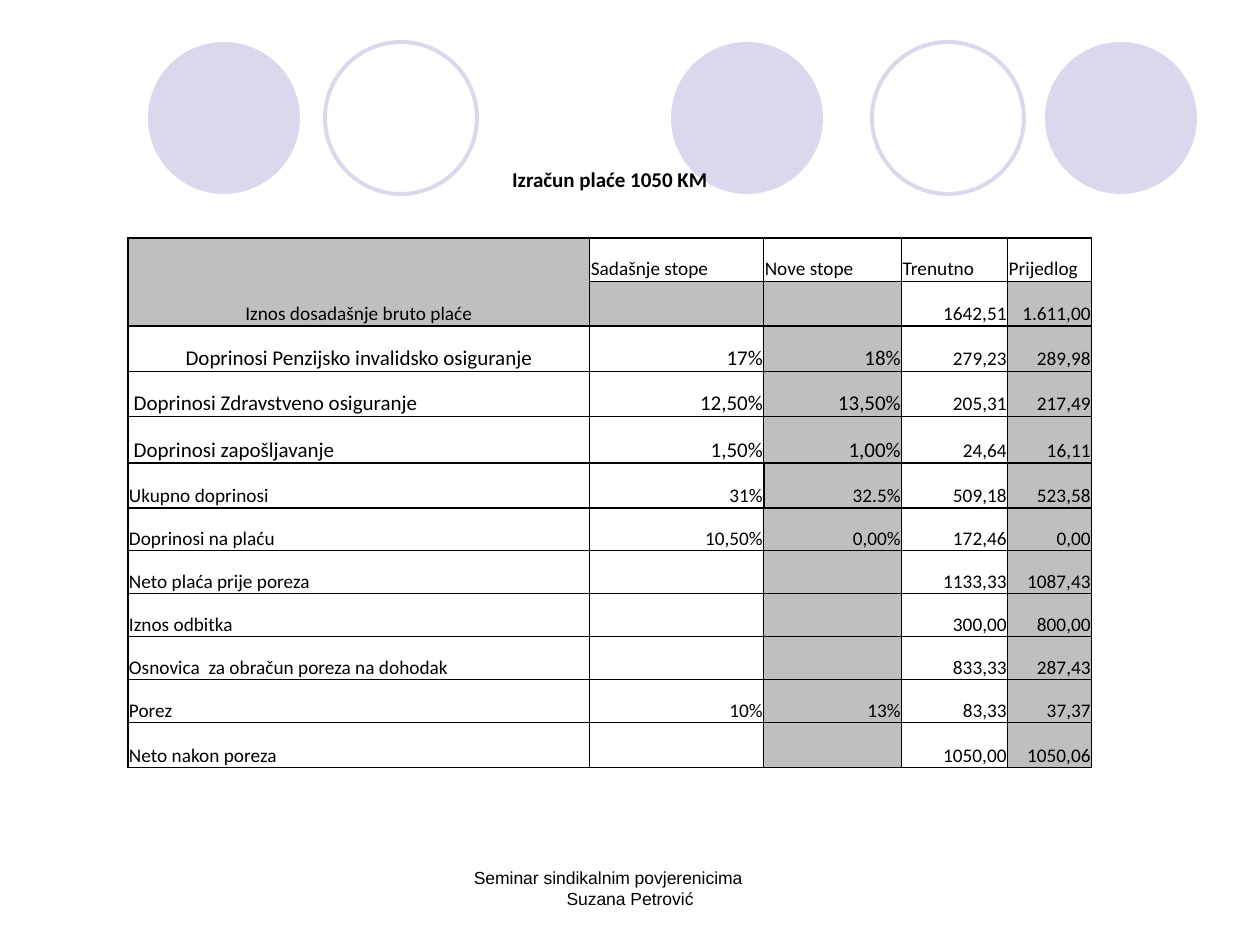
from lxml import etree
from pptx import Presentation
from pptx import util as u
from pptx.dml.color import RGBColor
from pptx.enum import shapes, text
from pptx.oxml.ns import qn

PX = 914400 / 126
BLACK = RGBColor(0x00, 0x00, 0x00)
WHITE = RGBColor(0xFF, 0xFF, 0xFF)
GREY = RGBColor(0xBF, 0xBF, 0xBF)
LILAC = RGBColor(0xD9, 0xD8, 0xEC)
LEFT, CENTER, RIGHT = text.PP_ALIGN.LEFT, text.PP_ALIGN.CENTER, text.PP_ALIGN.RIGHT

CIRCLES = [(671, True), (1045, True), (148, True), (872, False), (325, False)]
COLUMN_WIDTHS = [106, 106, 106, 144, 174, 138, 106, 84]
ROW_HEIGHTS = [45, 45, 43, 45, 45, 45, 47, 45, 43, 43, 43, 43, 43, 45]
# Each row: label, current rate, new rate, current amount, proposed amount
ROWS = [
    ("Izračun plaće 1050 KM", "", "", "", ""),
    ("", "", "", "", ""),
    ("Iznos dosadašnje bruto plaće", "Sadašnje stope", "Nove stope", "Trenutno", "Prijedlog"),
    ("", "", "", "1642,51", "1.611,00"),
    (" Doprinosi Penzijsko invalidsko osiguranje ", "17%", "18%", "279,23", "289,98"),
    (" Doprinosi Zdravstveno osiguranje", "12,50%", "13,50%", "205,31", "217,49"),
    (" Doprinosi zapošljavanje", "1,50%", "1,00%", "24,64", "16,11"),
    ("Ukupno doprinosi", "31%", "32.5%", "509,18", "523,58"),
    ("Doprinosi na plaću", "10,50%", "0,00%", "172,46", "0,00"),
    ("Neto plaća prije poreza", "", "", "1133,33", "1087,43"),
    ("Iznos odbitka", "", "", "300,00", "800,00"),
    ("Osnovica  za obračun poreza na dohodak", "", "", "833,33", "287,43"),
    ("Porez", "10%", "13%", "83,33", "37,37"),
    ("Neto nakon poreza", "", "", "1050,00", "1050,06"),
]
TITLE, HEADER, GROSS, DEDUCTION = 0, 2, 3, 10
CONTRIBUTIONS = range(4, 7)
TOTAL = 7
LABEL_COLUMNS = 4
THICK_ROW_EDGES = (2, 4, 7, 8, 14)


def px(length):
    return u.Emu(round(length * PX))


def horizontal_width(edge, column):
    """Line width in points of the row edge, counted from the top."""
    if edge < HEADER or (edge == GROSS and column < LABEL_COLUMNS):
        return 0
    return 1 if edge in THICK_ROW_EDGES else 0.5


def vertical_width(edge, row):
    """Line width in points of the column edge, counted from the left."""
    if row < HEADER or 0 < edge < LABEL_COLUMNS:
        return 0
    return 1 if edge in (0, 8) or (edge == 5 and row == TOTAL) else 0.5


def cell_fill(row, column):
    if row < HEADER:
        return None
    if column < LABEL_COLUMNS and row in (HEADER, GROSS):
        return GREY
    if row >= GROSS and (column in (5, 7) or (column == 4 and row == GROSS)):
        return GREY
    return WHITE if row in CONTRIBUTIONS and column <= 4 else None


def cell_alignment(row, column):
    if column == 0:
        return CENTER if row in (TITLE, HEADER, CONTRIBUTIONS[0]) else LEFT
    return LEFT if row == HEADER else RIGHT


class SlideBuilder:
    def __init__(self, slide, body_font="Calibri", footer_font="Arial"):
        self.slide = slide
        self.body_font = body_font
        self.footer_font = footer_font

    def style(self, paragraph, font_name, size, alignment, bold=False):
        paragraph.alignment = alignment
        font = paragraph.font
        font.name, font.size, font.bold = font_name, u.Pt(size), bold
        font.color.rgb = BLACK

    def circle(self, left, top, size, filled):
        shape = self.slide.shapes.add_shape(
            shapes.MSO_SHAPE.OVAL, px(left), px(top), px(size), px(size))
        shape.shadow.inherit = False
        if filled:
            shape.fill.solid()
            shape.fill.fore_color.rgb = LILAC
            shape.line.fill.background()
        else:
            shape.fill.background()
            shape.line.color.rgb = LILAC
            shape.line.width = u.Pt(2.25)

    def footer(self, left, top, width, height, content):
        """Two centred lines, the second one shifted by a hanging indent."""
        frame = self.slide.shapes.add_textbox(
            px(left), px(top), px(width), px(height)).text_frame
        frame.word_wrap = True
        frame.margin_left, frame.margin_right = 0, px(45)
        paragraph = frame.paragraphs[0]
        paragraph.text = content
        self.style(paragraph, self.footer_font, 10, CENTER)
        properties = paragraph._p.get_or_add_pPr()
        properties.set("marL", str(px(44)))
        properties.set("indent", str(px(-44)))

    def borders(self, cell, widths):
        """Set left, right, top and bottom widths; zero means no line."""
        properties = cell._tc.get_or_add_tcPr()
        for position, (side, width) in enumerate(zip("LRTB", widths)):
            line = etree.Element(qn(f"a:ln{side}"), w=str(u.Pt(width)))
            if width:
                fill = etree.SubElement(line, qn("a:solidFill"))
                etree.SubElement(fill, qn("a:srgbClr"), val=str(BLACK))
            else:
                etree.SubElement(line, qn("a:noFill"))
            properties.insert(position, line)

    def cell(self, cell, row, column, content):
        cell.margin_left = cell.margin_right = cell.margin_top = px(1)
        cell.margin_bottom = 0
        cell.vertical_anchor = text.MSO_ANCHOR.BOTTOM
        color = cell_fill(row, column)
        if color is None:
            cell.fill.background()
        else:
            cell.fill.solid()
            cell.fill.fore_color.rgb = color
        self.borders(cell, (
            vertical_width(column, row), vertical_width(column + 1, row),
            horizontal_width(row, column), horizontal_width(row + 1, column)))
        large = row == TITLE or (row in CONTRIBUTIONS and column <= 5)
        paragraph = cell.text_frame.paragraphs[0]
        if content:
            paragraph.text = content
        self.style(paragraph, self.body_font, 12 if large else 11,
                   cell_alignment(row, column), bold=row == TITLE)

    def table(self, left, top):
        table = self.slide.shapes.add_table(
            len(ROW_HEIGHTS), len(COLUMN_WIDTHS), px(left), px(top),
            px(sum(COLUMN_WIDTHS)), px(sum(ROW_HEIGHTS))).table
        table.first_row = table.horz_banding = False
        for column, width in zip(table.columns, COLUMN_WIDTHS):
            column.width = px(width)
        for index, (row, height) in enumerate(zip(table.rows, ROW_HEIGHTS)):
            row.height = px(height)
            label, *values = ROWS[index]
            contents = [label] + [""] * (LABEL_COLUMNS - 1) + values
            for column, content in enumerate(contents):
                self.cell(table.cell(index, column), index, column, content)
        table.cell(TITLE, 0).merge(table.cell(TITLE, 7))
        table.cell(HEADER, 0).merge(table.cell(GROSS, 3))
        for row in range(CONTRIBUTIONS[0], len(ROWS)):
            table.cell(row, 0).merge(table.cell(row, 1 if row == DEDUCTION else 3))


def main():
    presentation = Presentation()
    presentation.slide_width, presentation.slide_height = px(1260), px(945)
    builder = SlideBuilder(presentation.slides.add_slide(presentation.slide_layouts[6]))
    for left, filled in CIRCLES:
        builder.circle(left, 42, 152, filled)
    builder.footer(431, 861, 399, 63, "Seminar sindikalnim povjerenicima\vSuzana Petrović")
    builder.table(128, 148)
    presentation.save("out.pptx")


if __name__ == "__main__":
    main()
